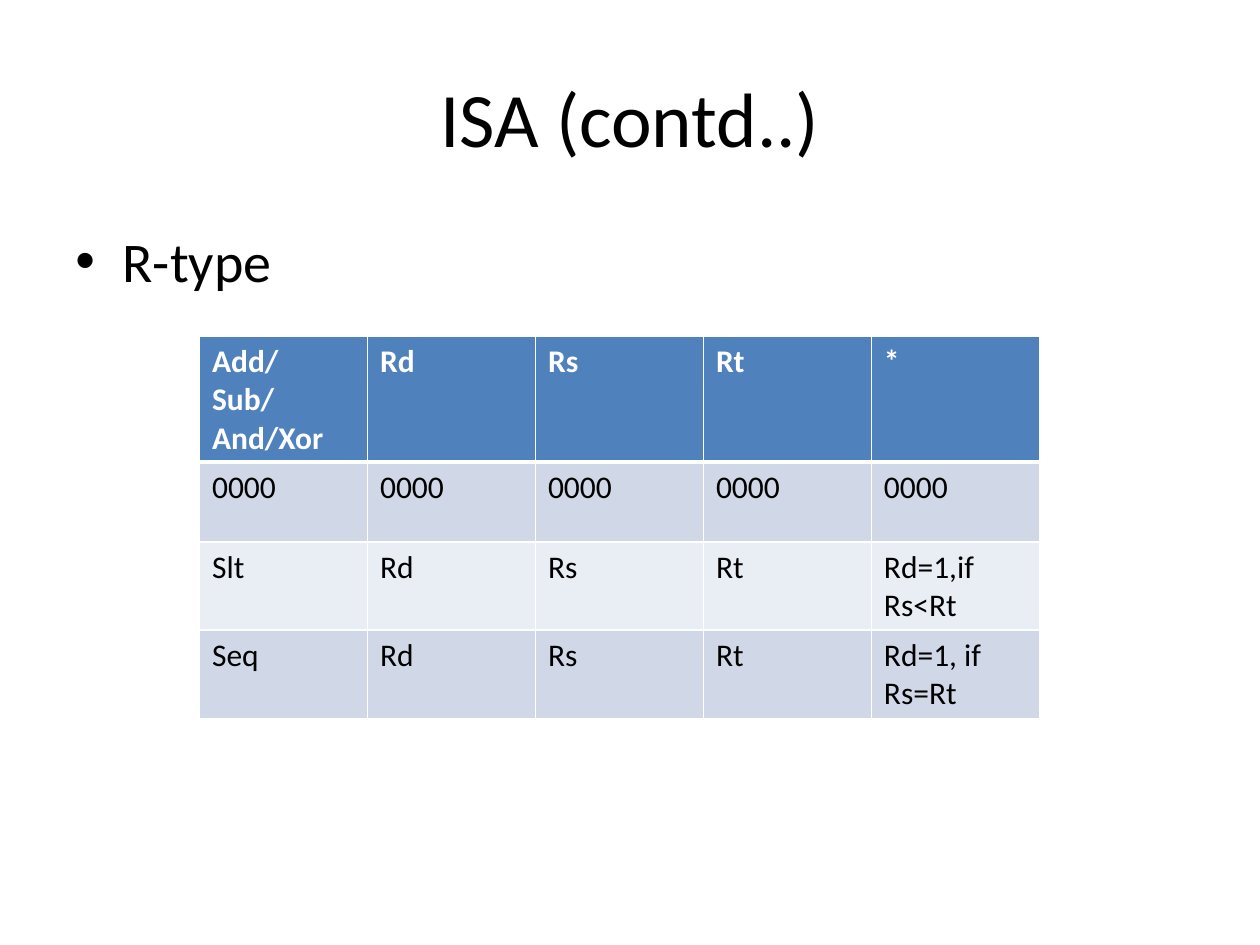
from dataclasses import dataclass

from lxml import etree
from pptx import Presentation
from pptx.dml.color import RGBColor
from pptx.enum.text import MSO_ANCHOR, PP_ALIGN
from pptx.oxml.ns import qn
from pptx.util import Pt

MIDDLE, TOP = MSO_ANCHOR.MIDDLE, MSO_ANCHOR.TOP
CENTER, LEFT = PP_ALIGN.CENTER, PP_ALIGN.LEFT
BLANK_LAYOUT = 6
FONT = "Calibri"
BLACK, WHITE = "000000", "FFFFFF"
HEADER_FILL = "4F81BD"
BAND_FILLS = ("D0D8E8", "E9EDF4")

COLUMN_WIDTH = 96
ROW_HEIGHTS = (29.2, 45.6, 29.2, 29.2)
INSTRUCTIONS = (
    ("Add/Sub/And/Xor", "Rd", "Rs", "Rt", "*"),
    ("0000",) * 5,
    ("Slt", "Rd", "Rs", "Rt", "Rd=1,if Rs<Rt"),
    ("Seq", "Rd", "Rs", "Rt", "Rd=1, if Rs=Rt"),
)


@dataclass
class Heading:
    text: str
    top: float
    height: float
    size: float
    anchor: MSO_ANCHOR
    align: PP_ALIGN
    bulleted: bool = False


HEADINGS = (
    Heading("ISA (contd..)", 21.6, 90, 44, MIDDLE, CENTER),
    Heading("R-type", 126, 356.4, 32, TOP, LEFT, bulleted=True),
)


def rgb(value: str) -> RGBColor:
    return RGBColor.from_string(value)


def write(paragraph, text: str, size: float, color: str = BLACK, bold: bool = False) -> None:
    run = paragraph.add_run()
    run.text = text
    font_format = {"name": FONT, "size": Pt(size), "bold": bold}
    for attribute, value in font_format.items():
        setattr(run.font, attribute, value)
    run.font.color.rgb = rgb(color)


def add_bullet(paragraph, indent: float, space_before: float) -> None:
    paragraph.space_before = Pt(space_before)
    properties = paragraph._p.get_or_add_pPr()
    properties.set("marL", str(Pt(indent)))
    properties.set("indent", str(-Pt(indent)))
    etree.SubElement(properties, qn("a:buFont")).set("typeface", "Arial")
    etree.SubElement(properties, qn("a:buChar")).set("char", "•")


def add_heading(slide, heading: Heading) -> None:
    box = slide.shapes.add_textbox(Pt(36), Pt(heading.top), Pt(648), Pt(heading.height))
    frame = box.text_frame
    frame.word_wrap = True
    frame.vertical_anchor = heading.anchor
    paragraph = frame.paragraphs[0]
    paragraph.alignment = heading.align
    if heading.bulleted:
        add_bullet(paragraph, indent=27, space_before=0.2 * heading.size)
    write(paragraph, heading.text, heading.size)


def set_borders(cell, widths: dict[str, float]) -> None:
    properties = cell._tc.get_or_add_tcPr()
    for side, width in widths.items():
        line = etree.SubElement(properties, qn(f"a:ln{side}"), w=str(Pt(width)))
        fill = etree.SubElement(line, qn("a:solidFill"))
        etree.SubElement(fill, qn("a:srgbClr")).set("val", WHITE)


def add_instruction_table(slide) -> None:
    columns = len(INSTRUCTIONS[0])
    frame = slide.shapes.add_table(
        len(INSTRUCTIONS), columns, Pt(114), Pt(192), Pt(columns * COLUMN_WIDTH), Pt(196.6)
    )
    table = frame.table
    for row, height in zip(table.rows, ROW_HEIGHTS):
        row.height = Pt(height)
    for row_index, texts in enumerate(INSTRUCTIONS):
        is_header = row_index == 0
        fill = HEADER_FILL if is_header else BAND_FILLS[(row_index - 1) % 2]
        borders = {
            "L": 1,
            "R": 1,
            "T": 3 if row_index == 1 else 1,
            "B": 3 if is_header else 1,
        }
        for column_index, text in enumerate(texts):
            cell = table.cell(row_index, column_index)
            set_borders(cell, borders)
            cell.fill.solid()
            cell.fill.fore_color.rgb = rgb(fill)
            write(cell.text_frame.paragraphs[0], text, 18,
                  WHITE if is_header else BLACK, is_header)


def main() -> None:
    deck = Presentation()
    deck.slide_width, deck.slide_height = Pt(720), Pt(540)
    slide = deck.slides.add_slide(deck.slide_layouts[BLANK_LAYOUT])
    for heading in HEADINGS:
        add_heading(slide, heading)
    add_instruction_table(slide)
    deck.save("out.pptx")


if __name__ == "__main__":
    main()
